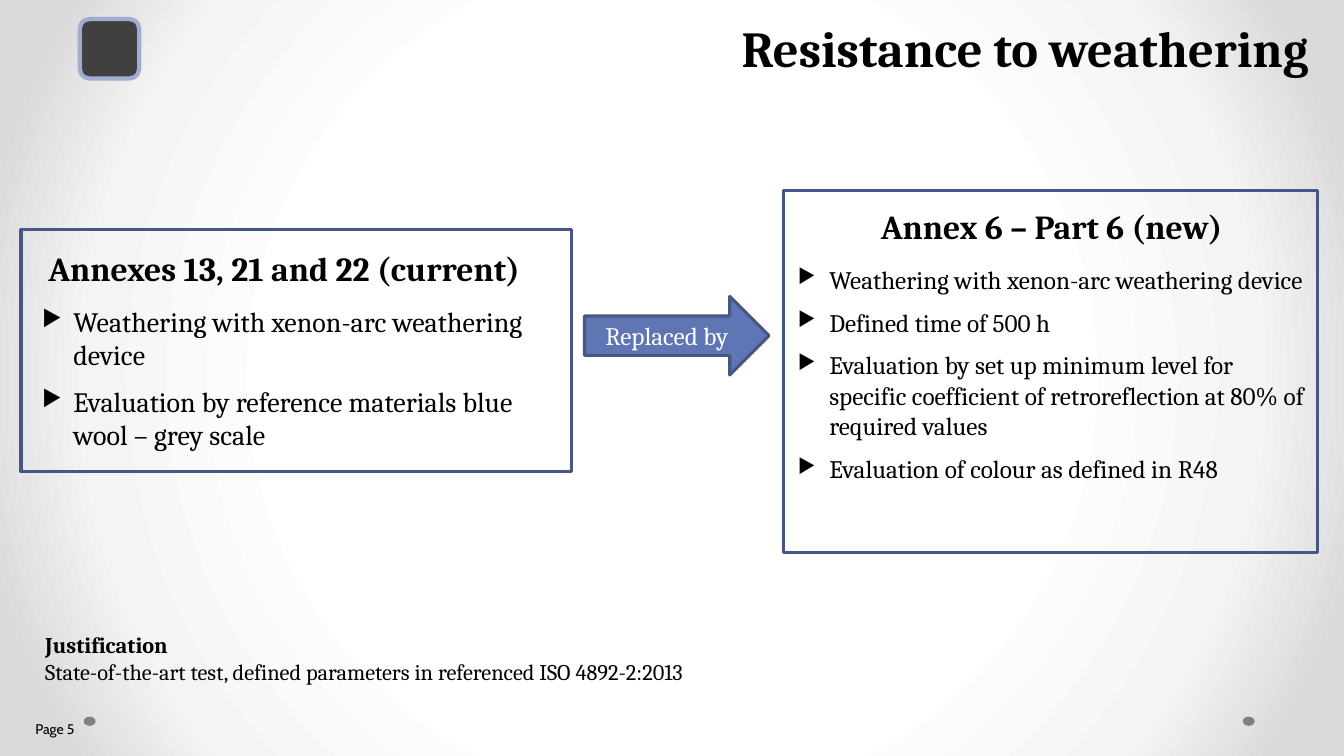
from dataclasses import dataclass

import pptx
import pptx.dml.color
import pptx.enum.shapes
import pptx.enum.text
import pptx.oxml
import pptx.oxml.ns
import pptx.util
from lxml import etree

Cm = pptx.util.Cm
Pt = pptx.util.Pt
RGBColor = pptx.dml.color.RGBColor
Shape = pptx.enum.shapes.MSO_SHAPE
Anchor = pptx.enum.text.MSO_ANCHOR
Align = pptx.enum.text.PP_ALIGN
qn = pptx.oxml.ns.qn

BLACK = RGBColor(0x00, 0x00, 0x00)
WHITE = RGBColor(0xFF, 0xFF, 0xFF)
BLUE = RGBColor(0x60, 0x76, 0xB4)
DARK_BLUE = RGBColor(0x47, 0x57, 0x85)
PALE_BLUE = RGBColor(0xA0, 0xAD, 0xD2)
GREY = RGBColor(0x80, 0x80, 0x80)
CHARCOAL = RGBColor(0x40, 0x40, 0x40)
SERIF = "Cambria"
BACKGROUND_STOPS = ((50, "FFFFFF"), (76, "F4F4F4"), (92, "DADADA"))


@dataclass
class Area:
    left: float
    top: float
    width: float
    height: float

    def lengths(self) -> tuple:
        return Cm(self.left), Cm(self.top), Cm(self.width), Cm(self.height)


@dataclass
class AnnexPanel:
    heading: str
    points: tuple
    point_size: int
    frame: Area
    heading_area: Area
    points_area: Area


PANELS = (
    AnnexPanel(
        "Annexes 13, 21 and 22 (current)",
        ("Weathering with xenon-arc weathering device",
         "Evaluation by reference materials blue wool – grey scale"),
        20,
        Area(0.53, 5.79, 13.87, 6.1),
        Area(0.97, 5.79, 13.44, 1.6),
        Area(0.81, 7.54, 13.72, 4.17),
    ),
    AnnexPanel(
        "Annex 6 – Part 6 (new)",
        ("Weathering with xenon-arc weathering device",
         "Defined time of 500 h",
         "Evaluation by set up minimum level for specific coefficient of "
         "retroreflection at 80% of required values",
         "Evaluation of colour as defined in R48"),
        18,
        Area(19.74, 4.8, 13.46, 9.12),
        Area(21.95, 4.72, 10.24, 1.6),
        Area(19.86, 6.53, 13.34, 7.14),
    ),
)


def add_span(para, text: str, size: float, bold: bool = False,
             color: RGBColor = BLACK, font: str = SERIF) -> None:
    span = para.add_run()
    span.text = text
    span.font.size = Pt(size)
    span.font.bold = bold
    span.font.name = font
    span.font.color.rgb = color


def add_box(page, area: Area, anchor=Anchor.TOP):
    frame = page.shapes.add_textbox(*area.lengths()).text_frame
    frame.word_wrap = True
    frame.vertical_anchor = anchor
    return frame


def add_figure(page, kind, area: Area, fill=None, line=None, weight: float = 2.25):
    figure = page.shapes.add_shape(kind, *area.lengths())
    figure.shadow.inherit = False
    if fill is None:
        figure.fill.background()
    else:
        figure.fill.solid()
        figure.fill.fore_color.rgb = fill
    if line is None:
        figure.line.fill.background()
    else:
        figure.line.color.rgb = line
        figure.line.width = Pt(weight)
    return figure


def space_list(para) -> None:
    para.space_before = Pt(3)
    para.space_after = Pt(6)


def add_bullet(para) -> None:
    properties = para._p.get_or_add_pPr()
    properties.set("marL", str(Cm(0.79)))
    properties.set("indent", str(-Cm(0.79)))
    color = etree.SubElement(properties, qn("a:buClr"))
    etree.SubElement(color, qn("a:srgbClr"), val=str(BLACK))
    etree.SubElement(properties, qn("a:buSzPct"), val="80000")
    etree.SubElement(properties, qn("a:buChar"), char="▶")


def add_panel(page, panel: AnnexPanel) -> None:
    add_figure(page, Shape.RECTANGLE, panel.frame, line=DARK_BLUE)
    heading = add_box(page, panel.heading_area, Anchor.BOTTOM).paragraphs[0]
    space_list(heading)
    add_span(heading, panel.heading, 24, bold=True)
    box = add_box(page, panel.points_area)
    for index, point in enumerate(panel.points):
        para = box.add_paragraph() if index else box.paragraphs[0]
        space_list(para)
        add_bullet(para)
        add_span(para, point, panel.point_size)


def paint_background(page) -> None:
    fill = page.background.fill
    fill.solid()
    solid = page._element.find(".//" + qn("a:solidFill"))
    stops = "".join(f'<a:gs pos="{position * 1000}"><a:srgbClr val="{color}"/></a:gs>'
                    for position, color in BACKGROUND_STOPS)
    gradient = pptx.oxml.parse_xml(
        f'<a:gradFill {pptx.oxml.ns.nsdecls("a")} rotWithShape="1">'
        f'<a:gsLst>{stops}</a:gsLst><a:path path="circle">'
        '<a:fillToRect l="50000" t="50000" r="50000" b="50000"/></a:path></a:gradFill>')
    solid.getparent().replace(solid, gradient)


def main() -> None:
    deck = pptx.Presentation()
    deck.slide_width, deck.slide_height = Cm(33.87), Cm(19.05)
    page = deck.slides.add_slide(deck.slide_layouts[5])
    paint_background(page)

    # Title
    title = page.shapes.title
    title.left, title.top, title.width, title.height = Area(17.96, 0.48, 15.27, 1.63).lengths()
    title.text_frame.auto_size = pptx.enum.text.MSO_AUTO_SIZE.NONE
    title.text_frame.word_wrap = True
    title.text_frame.vertical_anchor = Anchor.TOP
    para = title.text_frame.paragraphs[0]
    para.alignment = Align.RIGHT
    para.line_spacing = 0.9
    add_span(para, "Resistance to weathering", 36, bold=True)

    # Footer dots and badge
    for left in (2.11, 31.32):
        add_figure(page, Shape.OVAL, Area(left, 18.06, 0.3, 0.23), fill=GREY)
    add_figure(page, Shape.ROUNDED_RECTANGLE, Area(2.01, 0.48, 1.5, 1.5),
               CHARCOAL, PALE_BLUE, 3)

    # Current and new requirements
    for panel in PANELS:
        add_panel(page, panel)
    arrow = add_figure(page, Shape.RIGHT_ARROW, Area(14.73, 7.47, 4.65, 1.98), BLUE, DARK_BLUE)
    arrow.text_frame.vertical_anchor = Anchor.MIDDLE
    para = arrow.text_frame.paragraphs[0]
    para.alignment = Align.CENTER
    add_span(para, "Replaced by", 18, color=WHITE)

    # Justification and page number
    box = add_box(page, Area(0.89, 15.77, 20.5, 1.63))
    add_span(box.paragraphs[0], "Justification", 16, bold=True)
    add_span(box.add_paragraph(),
             "State-of-the-art test, defined parameters in referenced ISO 4892-2:2013", 16)
    box = add_box(page, Area(0.64, 17.86, 2.08, 1.02), Anchor.MIDDLE)
    add_span(box.paragraphs[0], "Page 5", 10, font="Cabin")

    deck.save("out.pptx")


if __name__ == "__main__":
    main()
